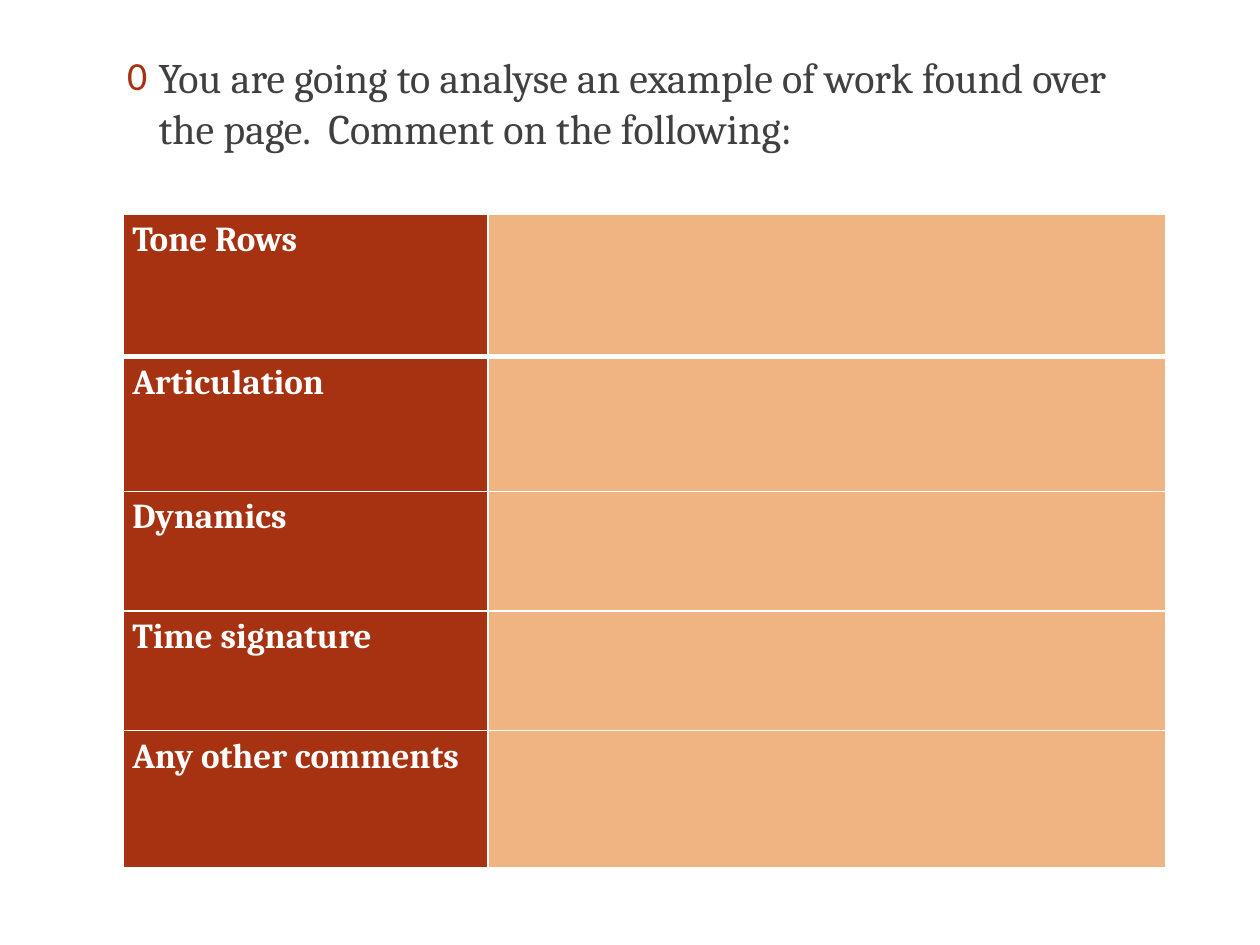
import pptx
import pptx.dml.color
import pptx.enum.text
import pptx.oxml
import pptx.oxml.ns
import pptx.util
import lxml.etree

RUST = pptx.dml.color.RGBColor(0xA6, 0x32, 0x12)
PEACH = pptx.dml.color.RGBColor(0xF0, 0xB4, 0x83)
WHITE = pptx.dml.color.RGBColor(0xFF, 0xFF, 0xFF)
CHARCOAL = pptx.dml.color.RGBColor(0x40, 0x40, 0x40)
FONT = "Cambria"

SLIDE_WIDTH = pptx.util.Inches(10)
SLIDE_HEIGHT = pptx.util.Inches(7.5)
INTRO_BOX = (0.91, 0.36, 8.17, 4.32)
TABLE_BOX = (0.98, 1.7, 8.27, 5.19)
COLUMN_SHARES = (0.35, 0.65)
TOPICS = {
    "Tone Rows": 1.13,
    "Articulation": 1.07,
    "Dynamics": 0.95,
    "Time signature": 0.95,
    "Any other comments": 1.09,
}


def add_child(parent, tag, **attributes):
    child = lxml.etree.SubElement(parent, pptx.oxml.ns.qn(tag))
    for name, value in attributes.items():
        child.set(name, str(value))
    return child


def write_text(para, text, size, color, bold=False, line_spacing=None):
    para.space_before = pptx.util.Pt(0)
    if line_spacing:
        para.line_spacing = line_spacing
    span = para.add_run()
    span.text = text
    span.font.name = FONT
    span.font.size = pptx.util.Pt(size)
    span.font.bold = bold
    span.font.color.rgb = color


def add_bullet(para, character, color, percent, indent):
    properties = para._p.get_or_add_pPr()
    properties.set("marL", str(indent))
    properties.set("indent", str(-indent))
    bullet_color = add_child(properties, "a:buClr")
    add_child(bullet_color, "a:srgbClr", val=color)
    add_child(properties, "a:buSzPct", val=percent * 1000)
    add_child(properties, "a:buFont", typeface="+mn-lt")
    add_child(properties, "a:buChar", char=character)


def style_cell(cell, fill, bottom_width):
    properties = cell._tc.get_or_add_tcPr()
    widths = {"a:lnL": 1, "a:lnR": 1, "a:lnT": 1, "a:lnB": bottom_width}
    for side, width in widths.items():
        line = add_child(properties, side, w=pptx.util.Pt(width))
        line_fill = add_child(line, "a:solidFill")
        add_child(line_fill, "a:srgbClr", val=WHITE)
    cell.fill.solid()
    cell.fill.fore_color.rgb = fill
    cell.margin_left = cell.margin_right = pptx.util.Inches(0.07)
    cell.margin_top = cell.margin_bottom = 0


def place_intro(page, box):
    body = page.placeholders[1]
    body.left, body.top, body.width, body.height = box
    body.text_frame.auto_size = pptx.enum.text.MSO_AUTO_SIZE.NONE
    para = body.text_frame.paragraphs[0]
    add_bullet(para, "0", RUST, 95, pptx.util.Inches(0.25))
    write_text(
        para,
        "You are going to analyse an example of work found over the page.  "
        "Comment on the following:",
        size=24,
        color=CHARCOAL,
    )


def place_topics(page, box):
    width, height = box[2:]
    table = page.shapes.add_table(len(TOPICS), len(COLUMN_SHARES), *box).table
    for column, share in zip(table.columns, COLUMN_SHARES):
        column.width = int(width * share)
    total = sum(TOPICS.values())
    for index, (topic, weight) in enumerate(TOPICS.items()):
        row = table.rows[index]
        row.height = int(height * weight / total)
        for cell, fill in zip(row.cells, (RUST, PEACH)):
            style_cell(cell, fill, bottom_width=3 if index == 0 else 1)
        para = row.cells[0].text_frame.paragraphs[0]
        write_text(para, topic, size=20, color=WHITE, bold=True, line_spacing=1.15)


def main():
    deck = pptx.Presentation()
    deck.slide_width, deck.slide_height = SLIDE_WIDTH, SLIDE_HEIGHT
    page = deck.slides.add_slide(deck.slide_layouts[1])
    title = page.shapes.title._element
    title.getparent().remove(title)
    place_intro(page, [pptx.util.Inches(length) for length in INTRO_BOX])
    place_topics(page, [pptx.util.Inches(length) for length in TABLE_BOX])
    deck.save("out.pptx")


if __name__ == "__main__":
    main()
